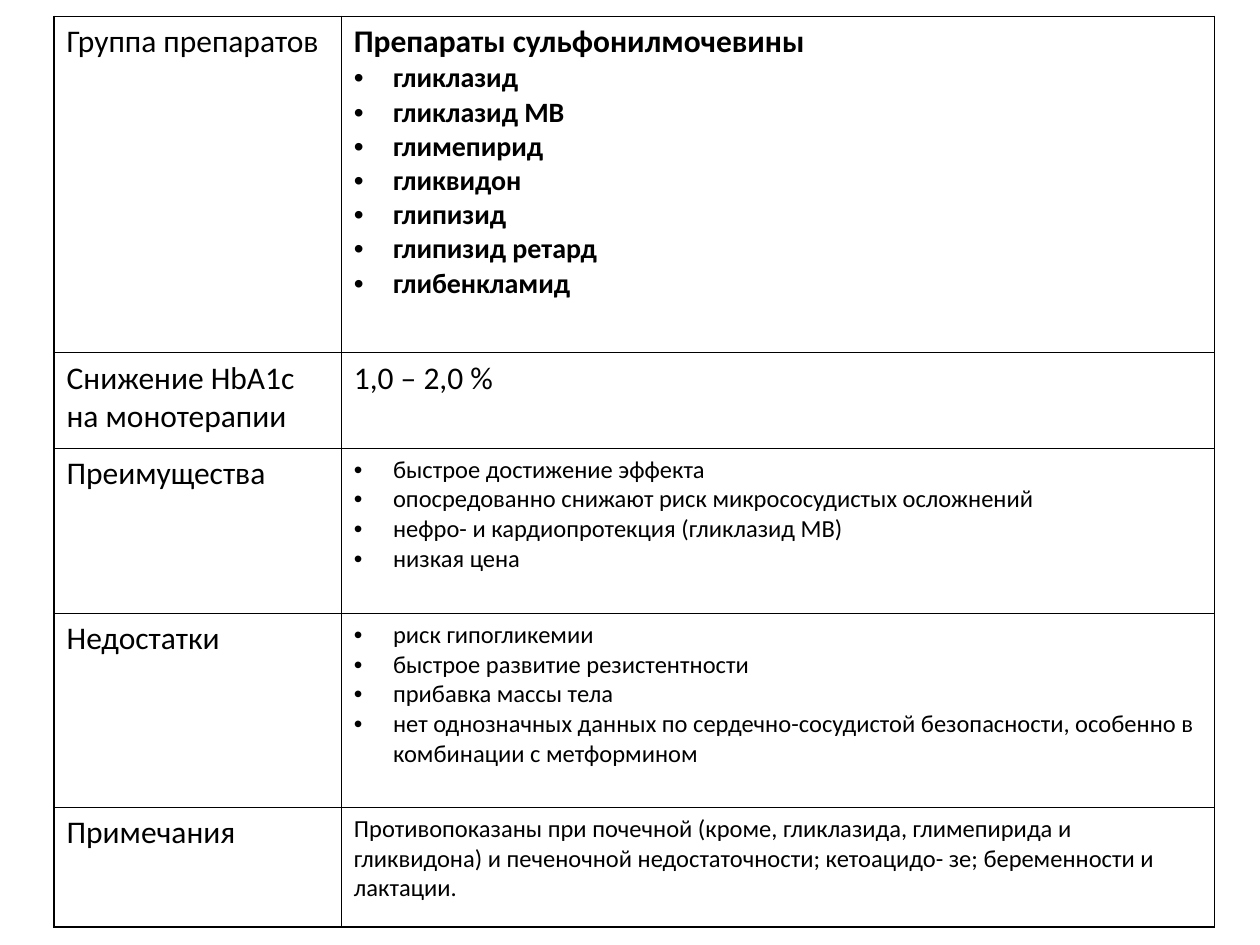
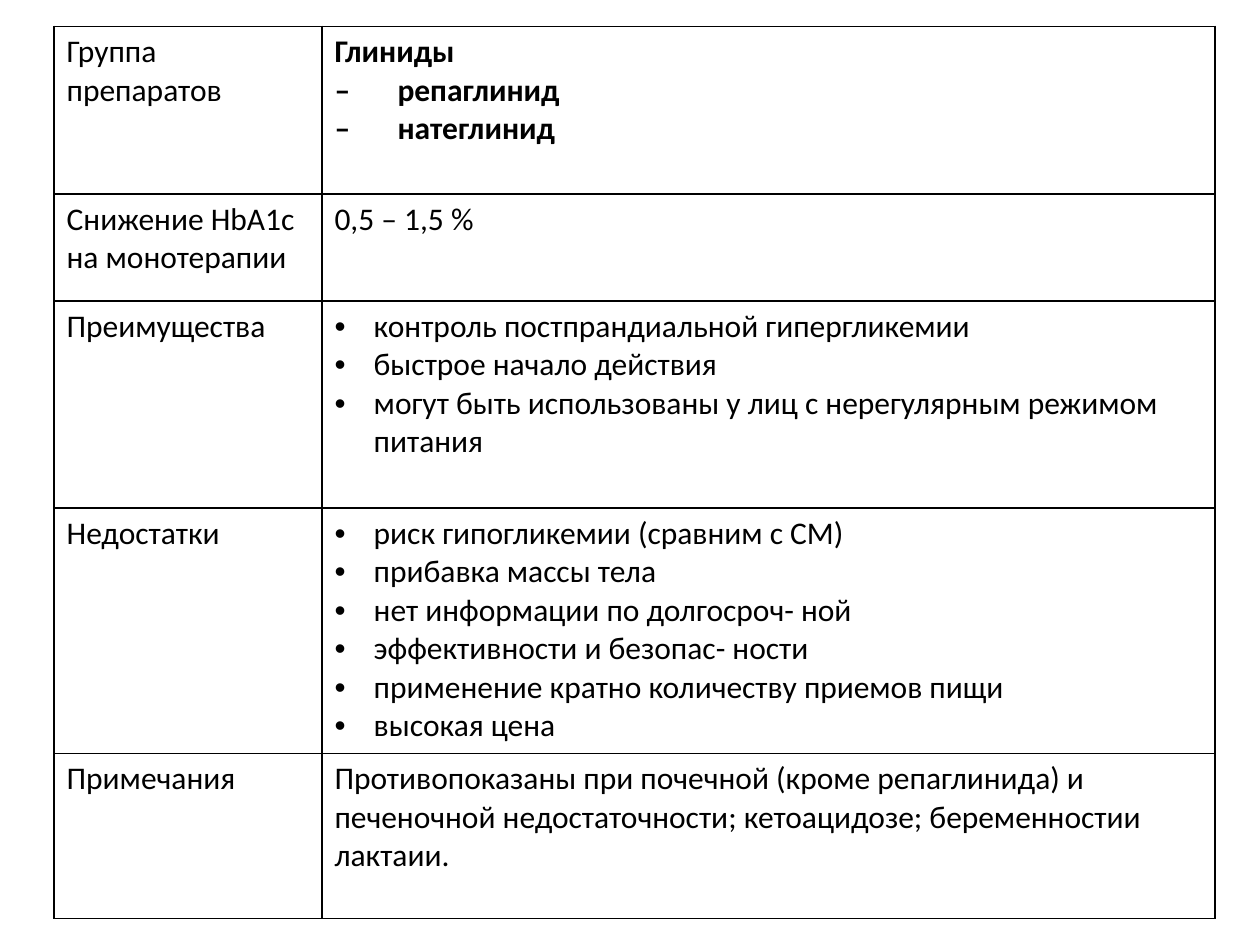
from lxml.etree import SubElement
from pptx import Presentation
from pptx.dml.color import RGBColor
from pptx.oxml.ns import qn
from pptx.util import Cm, Pt

INK = {"text": "000000", "line": "000000", "cell": "FFFFFF"}
FONT = "Calibri"
LEFT = 1.09
INDENT = Cm(0.79)

LABELS = [
    "Группа препаратов",
    "Снижение HbA1c на монотерапии",
    "Преимущества",
    "Недостатки",
    "Примечания",
]

# style: (size, bold, bullet)
STYLES = {
    "plain": (18, False, False),
    "head": (18, True, False),
    "drug": (16, True, True),
    "list": (18, False, True),
    "small": (14, False, False),
    "small list": (14, False, True),
}

# Each row: its height and its groups of (style, lines)
SULFA = {
    "top": 0.33,
    "cols": [5.79, 17.6],
    "rows": [
        (6.78, [
            ("head", ["Препараты сульфонилмочевины"]),
            ("drug", ["гликлазид", "гликлазид МВ", "глимепирид", "гликвидон",
                      "глипизид", "глипизид ретард", "глибенкламид"]),
        ]),
        (1.93, [("plain", ["1,0 – 2,0 %"])]),
        (3.33, [("small list", [
            "быстрое достижение эффекта",
            "опосредованно снижают риск микрососудистых осложнений",
            "нефро- и кардиопротекция (гликлазид МВ)",
            "низкая цена",
        ])]),
        (3.91, [("small list", [
            "риск гипогликемии",
            "быстрое развитие резистентности",
            "прибавка массы тела",
            "нет однозначных данных по сердечно-сосудистой безопасности, "
            "особенно в комбинации с метформином",
        ])]),
        (2.41, [("small", [
            "Противопоказаны при почечной (кроме, гликлазида, глимепирида и "
            "гликвидона) и печеночной недостаточности; кетоацидо- зе; "
            "беременности и лактации.",
        ])]),
    ],
}

GLINIDS = {
    "top": 0.53,
    "cols": [5.4, 18],
    "rows": [
        (3.38, [("head", ["Глиниды", "–\tрепаглинид", "–\tнатеглинид"])]),
        (2.16, [("plain", ["0,5 – 1,5 %"])]),
        (4.17, [("list", [
            "контроль постпрандиальной гипергликемии",
            "быстрое начало действия",
            "могут быть использованы у лиц с нерегулярным режимом питания",
        ])]),
        (4.95, [("list", [
            "риск гипогликемии (сравним с СМ)",
            "прибавка массы тела",
            "нет информации по долгосроч- ной",
            "эффективности и безопас- ности",
            "применение кратно количеству приемов пищи",
            "высокая цена",
        ])]),
        (3.33, [("plain", [
            "Противопоказаны при почечной (кроме репаглинида) и печеночной "
            "недостаточности; кетоацидозе; беременностии лактаии.",
        ])]),
    ],
}


def set_bullet(para):
    props = para._p.get_or_add_pPr()
    props.set("marL", str(INDENT))
    props.set("indent", str(-INDENT))
    SubElement(props, qn("a:buFont")).set("typeface", "Arial")
    SubElement(props, qn("a:buChar")).set("char", "•")


def set_frame(cell):
    """Give the cell its borders and fill."""
    props = cell._tc.get_or_add_tcPr()
    for side in ("lnL", "lnR", "lnT", "lnB"):
        line = SubElement(props, qn(f"a:{side}"))
        line.set("w", str(Pt(1)))
        fill = SubElement(line, qn("a:solidFill"))
        SubElement(fill, qn("a:srgbClr")).set("val", INK["line"])
    cell.fill.solid()
    cell.fill.fore_color.rgb = RGBColor.from_string(INK["cell"])


def fill_cell(cell, groups):
    set_frame(cell)
    frame = cell.text_frame
    lines = [(style, line) for style, texts in groups for line in texts]
    for i, (style, line) in enumerate(lines):
        size, bold, bullet = STYLES[style]
        para = frame.add_paragraph() if i else frame.paragraphs[0]
        if bullet:
            set_bullet(para)
        run = para.add_run()
        run.text = line
        font = run.font
        font.name, font.size, font.bold = FONT, Pt(size), bold
        font.color.rgb = RGBColor.from_string(INK["text"])


def add_page(deck, page):
    slide = deck.slides.add_slide(deck.slide_layouts[6])
    cols, rows = page["cols"], page["rows"]
    high = sum(size for size, _ in rows)
    table = slide.shapes.add_table(
        len(rows), len(cols), Cm(LEFT), Cm(page["top"]),
        Cm(sum(cols)), Cm(high)).table
    table.first_row = table.horz_banding = False
    for col, wide in zip(table.columns, cols):
        col.width = Cm(wide)
    for row, label, (size, groups) in zip(table.rows, LABELS, rows):
        row.height = Cm(size)
        fill_cell(row.cells[0], [("plain", [label])])
        fill_cell(row.cells[1], groups)


def main():
    deck = Presentation()
    deck.slide_width, deck.slide_height = Cm(25.4), Cm(19.05)
    for page in (SULFA, GLINIDS):
        add_page(deck, page)
    deck.save("out.pptx")


if __name__ == "__main__":
    main()
